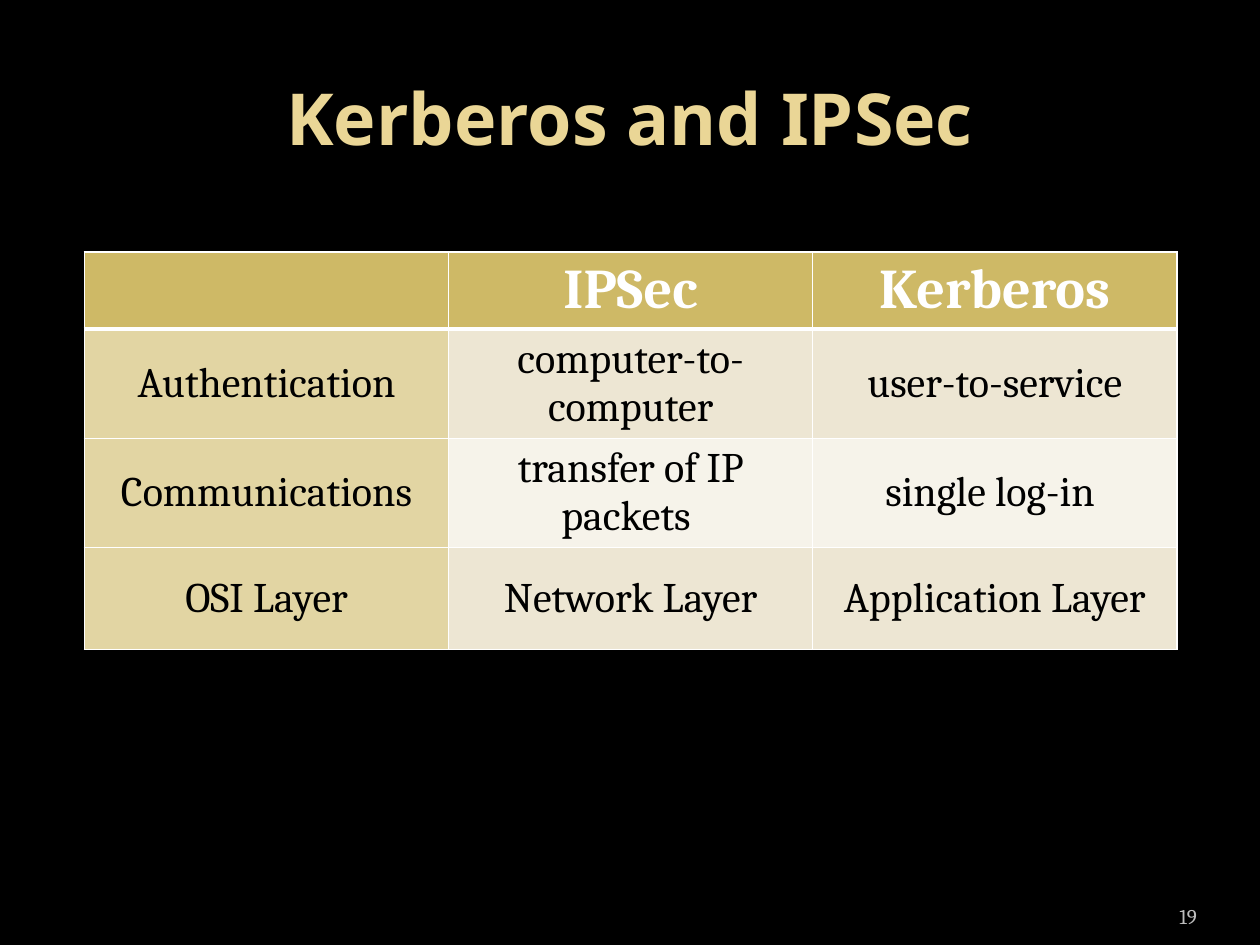
from dataclasses import dataclass

import lxml.etree
import pptx
import pptx.dml.color
import pptx.enum.text
import pptx.oxml.ns
import pptx.util

Inches = pptx.util.Inches
Align = pptx.enum.text.PP_ALIGN
Anchor = pptx.enum.text.MSO_ANCHOR


@dataclass(frozen=True)
class Theme:
    background: str = "000000"
    title: str = "EAD696"
    header: str = "CEB966"
    label: str = "E2D5A3"
    bands: tuple = ("EDE6D3", "F6F3EA")
    light: str = "FFFFFF"
    dark: str = "000000"
    number: str = "BDBDBD"
    heading_font: str = "Noto Sans"
    body_font: str = "Cambria"
    title_size: float = 41
    header_size: float = 32
    cell_size: float = 24
    number_size: float = 12


THEME = Theme()
ROWS = (
    ("", "IPSec", "Kerberos"),
    ("Authentication", "computer-to-computer", "user-to-service"),
    ("Communications", "transfer of IP packets ", "single log-in "),
    ("OSI Layer", "Network Layer", "Application Layer"),
)
ROW_HEIGHTS = (0.58, 0.78, 0.85, 0.81)


def rgb(value):
    return pptx.dml.color.RGBColor.from_string(value)


def write(frame, text, font, size, color, align, bold=False):
    frame.text = text
    para = frame.paragraphs[0]
    para.alignment = align
    for span in para.runs:
        span.font.name = font
        span.font.size = pptx.util.Pt(size)
        span.font.bold = bold
        span.font.color.rgb = rgb(color)


def place(shape, box):
    shape.left, shape.top, shape.width, shape.height = map(Inches, box)


def add_title(page, box, text):
    title = page.shapes.title
    place(title, box)
    title.text_frame.vertical_anchor = Anchor.MIDDLE
    write(title.text_frame, text, THEME.heading_font, THEME.title_size,
          THEME.title, Align.CENTER, bold=True)


def draw_borders(cell, widths):
    properties = cell._tc.get_or_add_tcPr()
    qn = pptx.oxml.ns.qn
    for side, width in widths.items():
        line = lxml.etree.SubElement(properties, qn(f"a:ln{side}"),
                                     w=str(pptx.util.Pt(width)))
        fill = lxml.etree.SubElement(line, qn("a:solidFill"))
        lxml.etree.SubElement(fill, qn("a:srgbClr"), val=THEME.light)


def cell_fill(row, column):
    if row == 0:
        return THEME.header
    if column == 0:
        return THEME.label
    return THEME.bands[(row - 1) % 2]


def add_comparison(page, box):
    columns = len(ROWS[0])
    table = page.shapes.add_table(len(ROWS), columns, *map(Inches, box)).table
    for column in table.columns:
        column.width = Inches(box[2] / columns)
    for row, height in zip(table.rows, ROW_HEIGHTS):
        row.height = Inches(height)
    for row, texts in enumerate(ROWS):
        header = row == 0
        for column, text in enumerate(texts):
            cell = table.cell(row, column)
            draw_borders(cell, {"L": 1, "R": 1, "T": 3 if row == 1 else 1,
                                "B": 3 if header else 1})
            cell.fill.solid()
            cell.fill.fore_color.rgb = rgb(cell_fill(row, column))
            cell.vertical_anchor = Anchor.TOP if header else Anchor.MIDDLE
            write(cell.text_frame, text, THEME.body_font,
                  THEME.header_size if header else THEME.cell_size,
                  THEME.light if header else THEME.dark, Align.CENTER, bold=header)


def add_page_number(page, box, number):
    frame = page.shapes.add_textbox(*map(Inches, box)).text_frame
    frame.word_wrap = True
    frame.margin_left = frame.margin_right = 0
    frame.vertical_anchor = Anchor.BOTTOM
    write(frame, number, THEME.body_font, THEME.number_size, THEME.number, Align.RIGHT)


def main():
    deck = pptx.Presentation()
    deck.slide_width, deck.slide_height = Inches(10), Inches(7.5)
    page = deck.slides.add_slide(deck.slide_layouts.get_by_name("Title Only"))
    page.background.fill.solid()
    page.background.fill.fore_color.rgb = rgb(THEME.background)
    add_title(page, (0.5, 0.3, 9, 1.25), "Kerberos and IPSec")
    add_comparison(page, (0.67, 2, 8.67, sum(ROW_HEIGHTS)))
    add_page_number(page, (8.67, 7.02, 0.83, 0.4), "19")
    deck.save("out.pptx")


if __name__ == "__main__":
    main()
